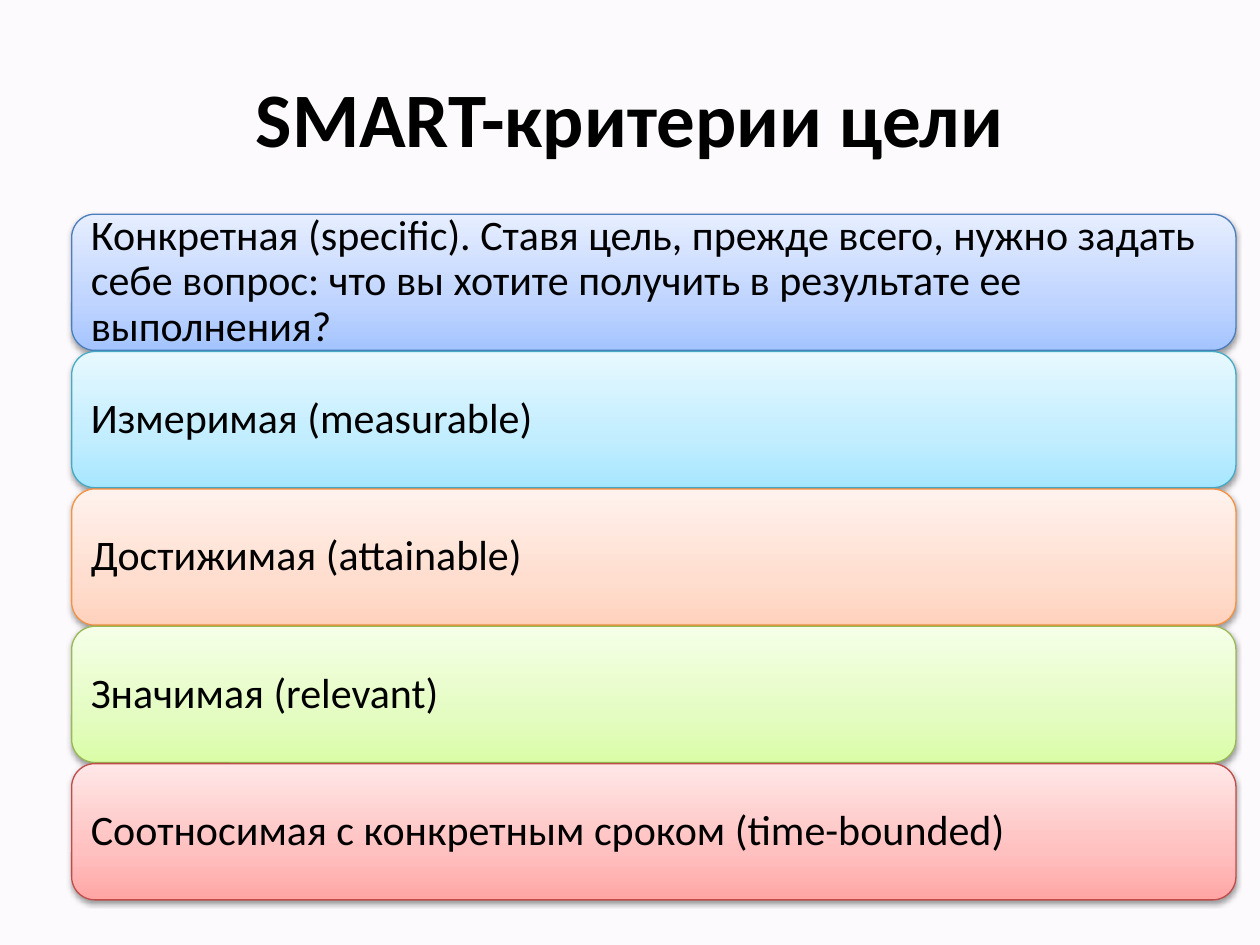
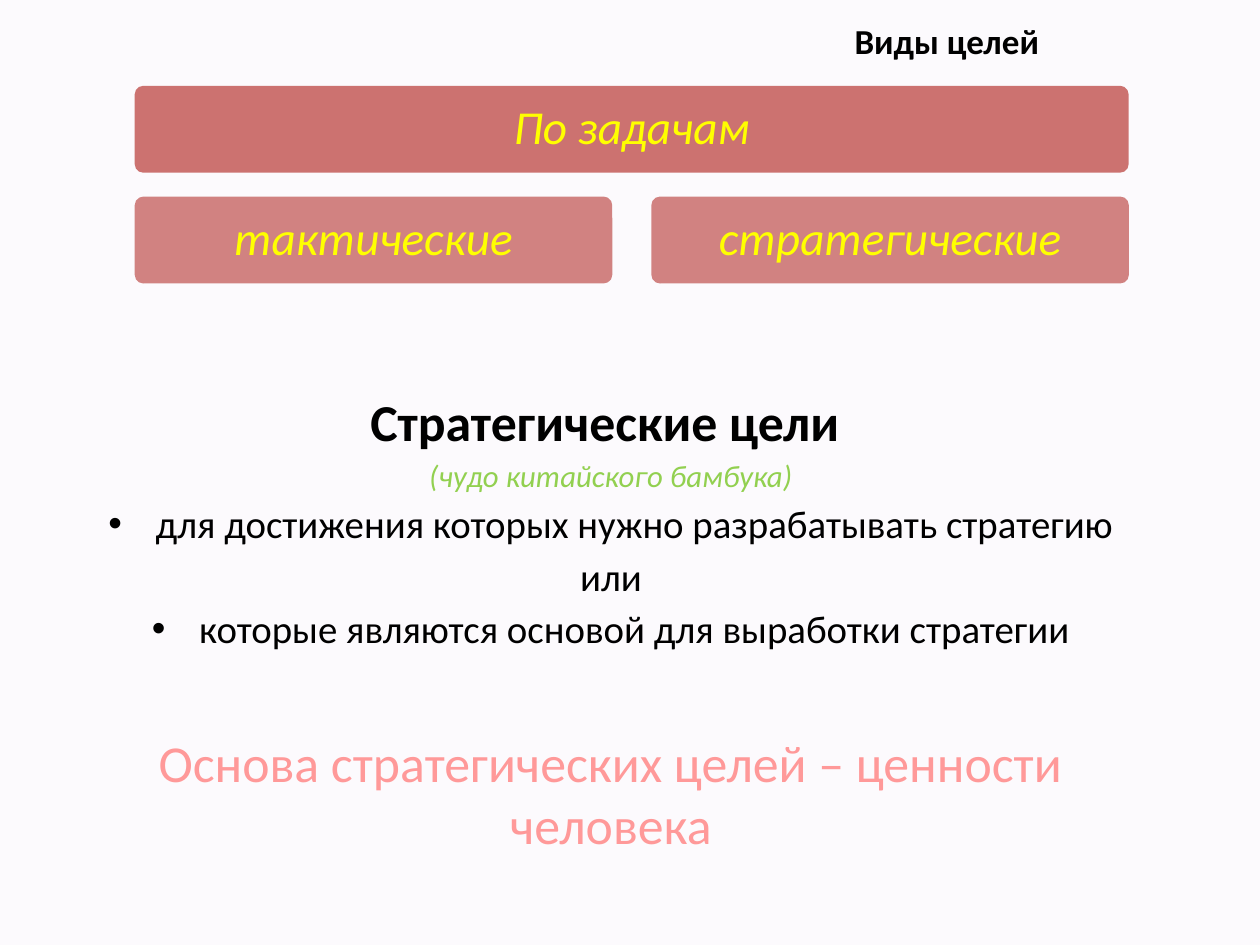
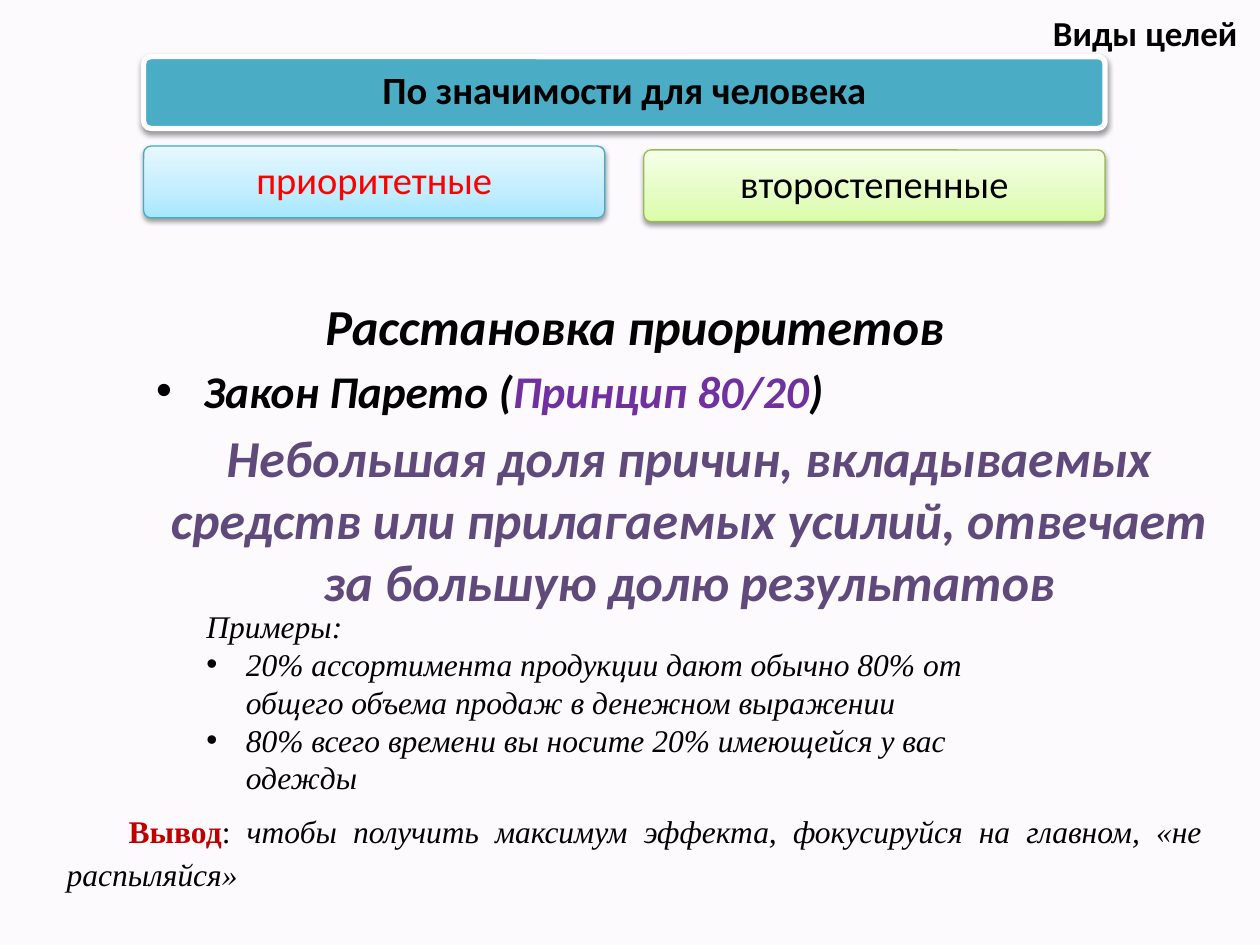
from collections import namedtuple

from lxml import etree
from pptx import Presentation
from pptx.dml.color import RGBColor
from pptx.enum import shapes, text
from pptx.oxml import ns
from pptx.util import Pt

BACKGROUND = RGBColor(0xFC, 0xFA, 0xFD)
BLACK = RGBColor(0x00, 0x00, 0x00)
WHITE = RGBColor(0xFF, 0xFF, 0xFF)
RED = RGBColor(0xFF, 0x00, 0x00)
DARK_RED = RGBColor(0xC0, 0x00, 0x00)
BRICK = RGBColor(0xC0, 0x50, 0x4D)
PINK = RGBColor(0xFF, 0x99, 0x99)
YELLOW = RGBColor(0xFF, 0xFF, 0x00)
LIME = RGBColor(0x92, 0xD0, 0x50)
TEAL = RGBColor(0x4B, 0xAC, 0xC6)
PURPLE = RGBColor(0x70, 0x30, 0xA0)
VIOLET = RGBColor(0x60, 0x4A, 0x7B)

# Gradient stops from bottom to top, and the outline that goes with them
Tint = namedtuple("Tint", "bottom middle top line")
BLUE_TINT = Tint(RGBColor(0xA4, 0xC4, 0xFF), RGBColor(0xBF, 0xD4, 0xFF),
                 RGBColor(0xE6, 0xEE, 0xFF), RGBColor(0x4B, 0x7E, 0xBC))
AQUA_TINT = Tint(RGBColor(0xA7, 0xE6, 0xFF), RGBColor(0xC1, 0xED, 0xFF),
                 RGBColor(0xE7, 0xF8, 0xFF), RGBColor(0x46, 0xAA, 0xC5))
ORANGE_TINT = Tint(RGBColor(0xFF, 0xD2, 0xBD), RGBColor(0xFF, 0xDE, 0xD0),
                   RGBColor(0xFF, 0xF2, 0xED), RGBColor(0xF6, 0x92, 0x40))
GREEN_TINT = Tint(RGBColor(0xDA, 0xFD, 0xA7), RGBColor(0xE4, 0xFC, 0xC2),
                  RGBColor(0xF5, 0xFF, 0xE7), RGBColor(0x98, 0xB9, 0x55))
RED_TINT = Tint(RGBColor(0xFF, 0xA6, 0xA5), RGBColor(0xFF, 0xC0, 0xBF),
                RGBColor(0xFF, 0xE7, 0xE7), RGBColor(0xBF, 0x4C, 0x48))

SANS, SERIF = "Calibri", "Times New Roman"
LEFT, CENTER = text.PP_ALIGN.LEFT, text.PP_ALIGN.CENTER
JUSTIFY = text.PP_ALIGN.JUSTIFY
TOP, MIDDLE = text.MSO_ANCHOR.TOP, text.MSO_ANCHOR.MIDDLE
BODY_GAP = 0.16  # space before a body paragraph, as a share of its font size

CRITERIA = [
    ("Конкретная (specific). Ставя цель, прежде всего, нужно задать себе "
     "вопрос: что вы хотите получить в результате ее выполнения?", BLUE_TINT),
    ("Измеримая (measurable)", AQUA_TINT),
    ("Достижимая (attainable)", ORANGE_TINT),
    ("Значимая (relevant)", GREEN_TINT),
    ("Соотносимая с конкретным сроком (time-bounded)", RED_TINT),
]


def sub(parent, tag, **attrs):
    return etree.SubElement(parent, ns.qn(tag), attrs)


def add_run(p, words, size=18, font=SANS, color=BLACK, bold=False, italic=False):
    r = p.add_run()
    r.text = words
    r.font.size = Pt(size)
    r.font.name = font
    r.font.color.rgb = color
    r.font.bold = bold
    r.font.italic = italic


def add_paragraph(tf, words="", align=LEFT, before=0, spacing=None,
                  margin=0, indent=0, bullet=False, **fmt):
    """Fill the first empty paragraph of the frame, or append one."""
    p = tf.paragraphs[0]
    if p.runs:
        p = tf.add_paragraph()
    p.alignment = align
    p.space_before = Pt(before)
    if spacing:
        p.line_spacing = spacing
    pr = p._p.get_or_add_pPr()
    pr.set("marL", str(Pt(margin)))
    pr.set("indent", str(Pt(indent)))
    if bullet:
        sub(pr, "a:buFont", typeface="Arial")
        sub(pr, "a:buChar", char="•")
    if words:
        add_run(p, words, **fmt)
    return p


def add_body(tf, words, size, **fmt):
    before = size * BODY_GAP if tf.paragraphs[0].runs else 0
    return add_paragraph(tf, words, **{"before": before, "size": size, **fmt})


def add_bullet(tf, words, margin, add=add_paragraph, **fmt):
    return add(tf, words, margin=margin, indent=-margin, bullet=True, **fmt)


def add_frame(s, x, y, w, h, anchor=TOP):
    tf = s.shapes.add_textbox(Pt(x), Pt(y), Pt(w), Pt(h)).text_frame
    tf.word_wrap = True
    tf.vertical_anchor = anchor
    return tf


def add_title(s, words, x, y, w, h, **fmt):
    tf = add_frame(s, x, y, w, h, MIDDLE)
    add_paragraph(tf, words, align=CENTER, bold=True, **fmt)


def fill_tint(sp, tint):
    sp.fill.gradient()
    sp.fill.gradient_angle = 90
    stops = sp._element.spPr.find(ns.qn("a:gradFill")).find(ns.qn("a:gsLst"))
    for stop in list(stops):
        stops.remove(stop)
    for pos, color in zip((0, 35000, 100000), tint):
        sub(sub(stops, "a:gs", pos=str(pos)), "a:srgbClr", val=str(color))


def add_shadow(sp):
    effects = sp._element.spPr.find(ns.qn("a:effectLst"))
    shadow = sub(effects, "a:outerShdw", blurRad=str(Pt(3.1)),
                 dist=str(Pt(1.6)), dir="5400000", rotWithShape="0")
    sub(sub(shadow, "a:srgbClr", val=str(BLACK)), "a:alpha", val="38000")


def add_tile(s, words, x, y, w, h, fill, opacity=100, line=None, line_width=0.75,
             shadow=True, corner=0.1, align=CENTER, **fmt):
    """Rounded box with its own text; fill is a colour or a Tint."""
    sp = s.shapes.add_shape(shapes.MSO_SHAPE.ROUNDED_RECTANGLE,
                            Pt(x), Pt(y), Pt(w), Pt(h))
    sp.adjustments[0] = corner
    if isinstance(fill, Tint):
        fill_tint(sp, fill)
        line = fill.line
    else:
        sp.fill.solid()
        sp.fill.fore_color.rgb = fill
        if opacity < 100:
            color = sp._element.spPr.find(ns.qn("a:solidFill"))[0]
            sub(color, "a:alpha", val=str(opacity * 1000))
    if line is None:
        sp.line.fill.background()
    else:
        sp.line.color.rgb = line
        sp.line.width = Pt(line_width)
    sp.shadow.inherit = False
    if shadow:
        add_shadow(sp)
    tf = sp.text_frame
    tf.word_wrap = True
    tf.vertical_anchor = MIDDLE
    tf.margin_left = tf.margin_right = tf.margin_top = tf.margin_bottom = Pt(7.2)
    add_paragraph(tf, words, align=align, spacing=0.9, **fmt)


def add_slide(prs):
    s = prs.slides.add_slide(prs.slide_layouts[6])
    s.background.fill.solid()
    s.background.fill.fore_color.rgb = BACKGROUND
    return s


def build_criteria(prs):
    s = add_slide(prs)
    add_title(s, "SMART-критерии цели", 36, 21.6, 648, 90, size=44)
    for i, (words, tint) in enumerate(CRITERIA):
        add_tile(s, words, 41, 122.4 + 78.5 * i, 665.3, 77.8, tint,
                 corner=0.17, align=LEFT, size=24)


def build_tasks(prs):
    s = add_slide(prs)
    add_title(s, "Виды целей", 382.3, 14.4, 317.5, 17.3, size=20)
    tile = dict(h=49.7, fill=BRICK, shadow=False, size=27, color=YELLOW, italic=True)
    add_tile(s, "По задачам", 77, 49, 568, opacity=80, **tile)
    for i, words in enumerate(("тактические", "стратегические")):
        add_tile(s, words, 77 + 295.2 * i, 112.3, 272.9, opacity=70, **tile)

    tf = add_frame(s, 25.2, 218.9, 648, 254.9)
    add_body(tf, "Стратегические цели ", 29.6, align=CENTER, bold=True)
    add_body(tf, "(чудо китайского бамбука)", 17.6, align=CENTER,
             color=LIME, italic=True)
    point = dict(size=22.2, align=CENTER)
    add_bullet(tf, "для достижения которых нужно разрабатывать стратегию",
               27, add_body, **point)
    add_body(tf, "или", **point)
    add_bullet(tf, "которые являются основой для выработки стратегии",
               27, add_body, **point)
    add_body(tf, "Основа стратегических целей – ценности человека", 29.6,
             align=CENTER, before=45, color=PINK)


def build_importance(prs):
    s = add_slide(prs)
    add_title(s, "Виды целей", 575.3, 10.8, 158.4, 15.1, size=20)
    add_tile(s, "По значимости для человека", 82.1, 32.4, 549.4, 41, TEAL,
             line=WHITE, line_width=3, size=22, bold=True)
    add_tile(s, "приоритетные", 82.1, 83.5, 263.5, 41, AQUA_TINT,
             size=22, color=RED)
    add_tile(s, "второстепенные", 367.9, 85.7, 263.5, 41, GREEN_TINT, size=22)

    add_title(s, "Расстановка приоритетов", 38.9, 166.3, 648, 39.6,
              size=28.8, italic=True)
    tf = add_frame(s, 82.1, 203.8, 624.2, 147.6)
    strong = dict(bold=True, italic=True)
    p = add_bullet(tf, "Закон Парето (", 27, add_body, size=25.9, **strong)
    add_run(p, "Принцип 80/20", size=25.9, color=PURPLE, **strong)
    add_run(p, ")", size=25.9, **strong)
    add_body(tf, "Небольшая доля причин, вкладываемых средств или прилагаемых "
             "усилий, отвечает за большую долю результатов", 29.6,
             align=CENTER, color=VIOLET, **strong)

    tf = add_frame(s, 110.9, 343.4, 475.9, 116.6)
    example = dict(font=SERIF, italic=True)
    add_paragraph(tf, "Примеры:", **example)
    for words in ("20% ассортимента продукции дают обычно 80% от общего объема "
                  "продаж в денежном выражении",
                  "80% всего времени вы носите 20% имеющейся у вас одежды"):
        add_bullet(tf, words, 22.5, **example)

    tf = add_frame(s, 31, 457.2, 663.1, 57.6)
    p = add_paragraph(tf, "Вывод", align=JUSTIFY, spacing=1.15, indent=35.4,
                      font=SERIF, color=DARK_RED, bold=True)
    add_run(p, ":", font=SERIF)
    add_run(p, " чтобы получить максимум эффекта, фокусируйся на главном, "
            "«не распыляйся»", **example)


def main():
    prs = Presentation()
    prs.slide_width, prs.slide_height = Pt(720), Pt(540)
    build_criteria(prs)
    build_tasks(prs)
    build_importance(prs)
    prs.save("out.pptx")


if __name__ == "__main__":
    main()
